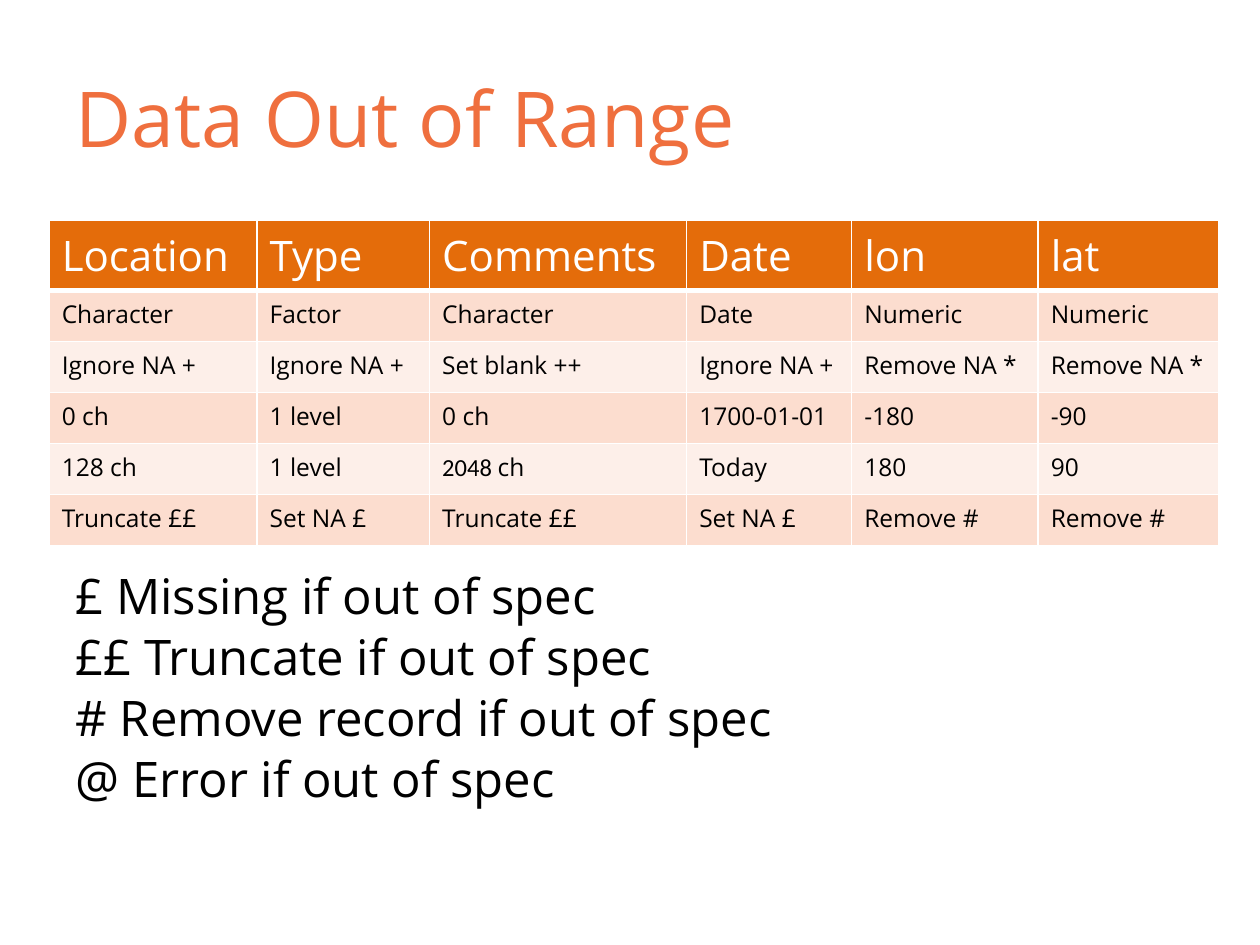
from dataclasses import dataclass

from lxml.etree import SubElement
from pptx import Presentation
from pptx.dml.color import RGBColor as RGB
from pptx.enum.text import MSO_ANCHOR as Anchor, MSO_AUTO_SIZE as AutoSize, PP_ALIGN as Align
from pptx.oxml.ns import qn
from pptx.util import Inches, Pt


@dataclass(frozen=True)
class Theme:
    font: str = "Open Sans"
    number_font: str = "Calibri"
    title: str = "EF6F3E"
    header: str = "E46C0A"
    bands: tuple = ("FCDDCF", "FDEFE9")
    text: str = "000000"
    light: str = "FFFFFF"
    title_size: int = 44
    header_size: int = 24
    cell_size: int = 14
    legend_size: int = 28
    rule: int = 1
    header_rule: int = 3


T = Theme()

COLUMNS = [1.65, 1.37, 2.04, 1.31, 1.48, 1.43]
ROWS = [
    ["Location", "Type", "Comments", "Date", "lon", "lat"],
    ["Character", "Factor", "Character", "Date", "Numeric", "Numeric"],
    ["Ignore NA +", "Ignore NA +", "Set blank ++", "Ignore NA +", "Remove NA *", "Remove NA *"],
    ["0 ch", "1 level", "0 ch", "1700-01-01", "-180", "-90"],
    ["128 ch", "1 level", [("2048 ", T.number_font), ("ch", T.font)], "Today", "180", "90"],
    ["Truncate ££", "Set NA £", "Truncate ££", "Set NA £", "Remove #", "Remove #"],
]
LEGEND = [
    "£ Missing if out of spec",
    "££ Truncate if out of spec",
    "# Remove record if out of spec",
    "@ Error if out of spec",
]


def add_text(p, text, size, color=T.text, align=Align.LEFT):
    p.alignment = align
    runs = [(text, T.font)] if isinstance(text, str) else text
    for part, font in runs:
        r = p.add_run()
        r.text = part
        r.font.name = font
        r.font.size = Pt(size)
        r.font.color.rgb = RGB.from_string(color)


def place(sp, box):
    sp.left, sp.top, sp.width, sp.height = map(Inches, box)
    tf = sp.text_frame
    tf.word_wrap = True
    tf.auto_size = AutoSize.NONE
    return tf


def fill_title(sp, box, text):
    tf = place(sp, box)
    tf.vertical_anchor = Anchor.MIDDLE
    add_text(tf.paragraphs[0], text, T.title_size, T.title)


def set_borders(cell, **widths):
    tcPr = cell._tc.get_or_add_tcPr()
    for side in "LRTB":
        ln = SubElement(tcPr, qn(f"a:ln{side}"), w=str(Pt(widths.get(side, T.rule))))
        SubElement(SubElement(ln, qn("a:solidFill")), qn("a:srgbClr"), val=T.light)


def add_rules_table(s, box):
    table = s.shapes.add_table(len(ROWS), len(COLUMNS), *map(Inches, box)).table
    for column, width in zip(table.columns, COLUMNS):
        column.width = Inches(width)
    for i, row in enumerate(ROWS):
        is_header = i == 0
        fill = T.header if is_header else T.bands[(i - 1) % 2]
        size = T.header_size if is_header else T.cell_size
        color = T.light if is_header else T.text
        edges = {0: {"B": T.header_rule}, 1: {"T": T.header_rule}}.get(i, {})
        for j, text in enumerate(row):
            cell = table.cell(i, j)
            set_borders(cell, **edges)
            cell.fill.solid()
            cell.fill.fore_color.rgb = RGB.from_string(fill)
            add_text(cell.text_frame.paragraphs[0], text, size, color)


def fill_legend(sp, box, lines):
    tf = place(sp, box)
    for i, line in enumerate(lines):
        p = tf.add_paragraph() if i else tf.paragraphs[0]
        pPr = p._p.get_or_add_pPr()
        pPr.set("marL", "0")
        pPr.set("indent", "0")
        SubElement(pPr, qn("a:buNone"))
        p.line_spacing = 0.95
        p.space_before = Pt(3 if i else 0)
        add_text(p, line, T.legend_size)


def main():
    prs = Presentation()
    prs.slide_width, prs.slide_height = Inches(10), Inches(7.5)
    s = prs.slides.add_slide(prs.slide_layouts[1])
    fill_title(s.shapes.title, (0.5, 0.3, 9, 1.25), "Data Out of Range")
    add_rules_table(s, (0.39, 1.75, sum(COLUMNS), 2.43))
    fill_legend(s.placeholders[1], (0.5, 4.47, 6.36, 2.08), LEGEND)
    prs.save("out.pptx")


if __name__ == "__main__":
    main()
